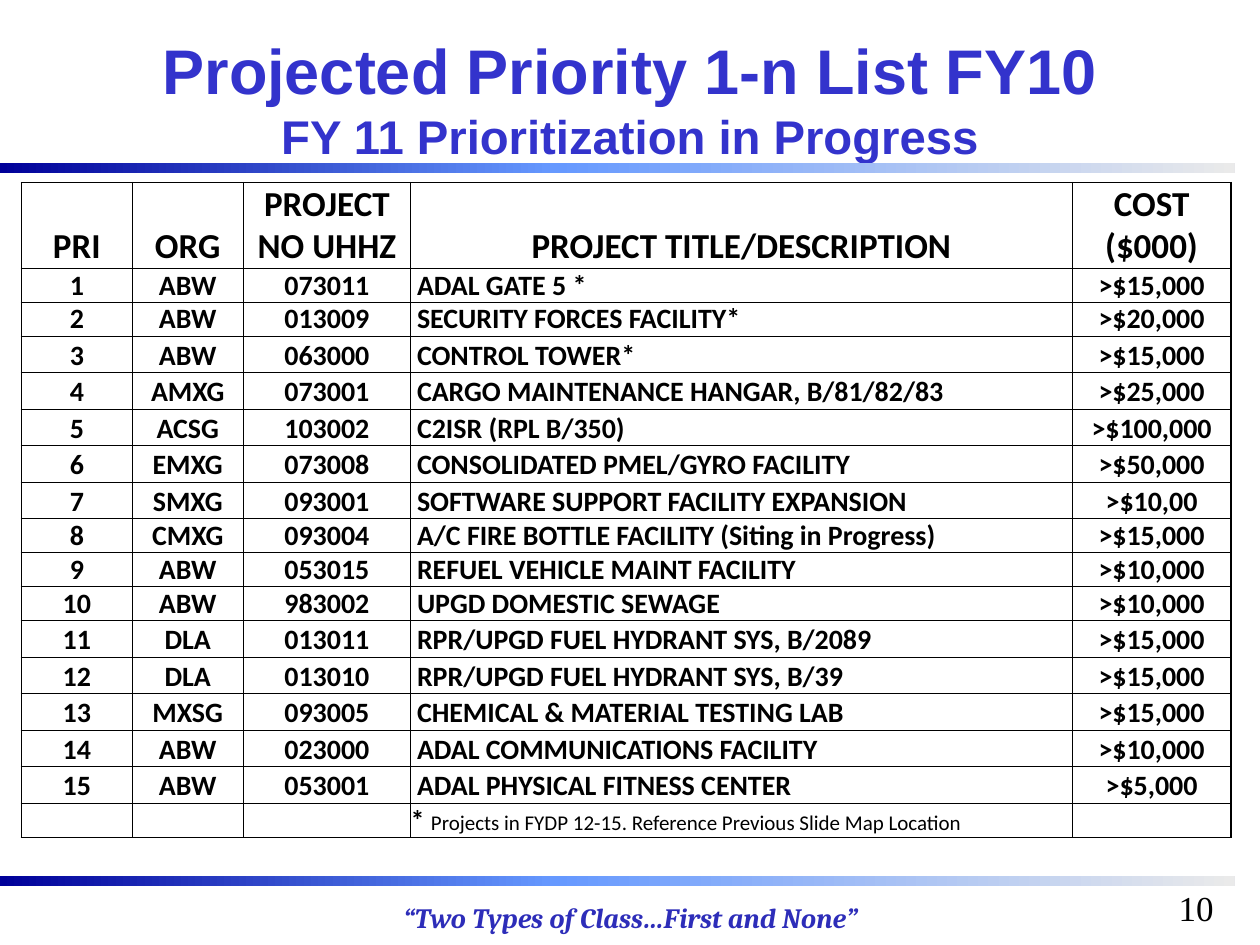
from lxml.etree import SubElement
from pptx import Presentation
from pptx.dml.color import RGBColor
from pptx.enum.shapes import MSO_SHAPE
from pptx.enum.text import MSO_ANCHOR, MSO_AUTO_SIZE, PP_ALIGN
from pptx.oxml.ns import qn
from pptx.util import Inches, Pt

HEADERS = ["PRI", "ORG", "PROJECT NO UHHZ", "PROJECT TITLE/DESCRIPTION", "COST\n($000)"]
PROJECTS = [
    ("ABW", "073011", "ADAL GATE 5 *", ">$15,000"),
    ("ABW", "013009", "SECURITY FORCES FACILITY*", ">$20,000"),
    ("ABW", "063000", "CONTROL TOWER*", ">$15,000"),
    ("AMXG", "073001", "CARGO MAINTENANCE HANGAR, B/81/82/83", ">$25,000"),
    ("ACSG", "103002", "C2ISR (RPL B/350)", ">$100,000"),
    ("EMXG", "073008", "CONSOLIDATED PMEL/GYRO FACILITY", ">$50,000"),
    ("SMXG", "093001", "SOFTWARE SUPPORT FACILITY EXPANSION", ">$10,00"),
    ("CMXG", "093004", "A/C FIRE BOTTLE FACILITY (Siting in Progress)", ">$15,000"),
    ("ABW", "053015", "REFUEL VEHICLE MAINT FACILITY", ">$10,000"),
    ("ABW", "983002", "UPGD DOMESTIC SEWAGE", ">$10,000"),
    ("DLA", "013011", "RPR/UPGD FUEL HYDRANT SYS, B/2089", ">$15,000"),
    ("DLA", "013010", "RPR/UPGD FUEL HYDRANT SYS, B/39", ">$15,000"),
    ("MXSG", "093005", "CHEMICAL & MATERIAL TESTING LAB", ">$15,000"),
    ("ABW", "023000", "ADAL COMMUNICATIONS FACILITY", ">$10,000"),
    ("ABW", "053001", "ADAL PHYSICAL FITNESS CENTER", ">$5,000"),
]
FOOTNOTE = "Projects in FYDP 12-15. Reference Previous Slide Map Location"
COLUMN_WIDTHS = [8.8, 8.8, 13.3, 52.5, 12.6]
SHORT_ROWS = {1, 2, 8, 9, 10, 16}
DESCRIPTION = 3


def color(hex_string):
    return RGBColor.from_string(hex_string)


def apply(target, values):
    for name, value in values.items():
        setattr(target, name, value)


class SlideBuilder:
    """Holds the style and the slide; lengths are units of a 100 x 75 grid."""

    TITLE = {"name": "Arial", "bold": True, "size": Pt(36), "color": "3333CC"}
    MOTTO = {"name": "Cambria", "bold": True, "italic": True, "size": Pt(16), "color": "2D2DB9"}
    NUMBER = {"name": "Times New Roman", "size": Pt(20), "color": "000000"}
    CELL = {"name": "Calibri", "bold": True, "size": Pt(16), "color": "000000"}
    HEADER = CELL | {"size": Pt(20)}
    NOTE = CELL | {"bold": False, "size": Pt(12)}

    def __init__(self, presentation):
        self.unit = presentation.slide_width / 100
        self.slide = presentation.slides.add_slide(presentation.slide_layouts[5])

    def grid(self, *lengths):
        return [round(length * self.unit) for length in lengths]

    def font(self, font, style):
        apply(font, {key: value for key, value in style.items() if key != "color"})
        font.color.rgb = color(style["color"])

    def run(self, paragraph, text, style):
        run = paragraph.add_run()
        run.text = text
        self.font(run.font, style)

    def title(self, box, heading, subheading):
        shape = self.slide.shapes.title
        apply(shape, dict(zip(("left", "top", "width", "height"), self.grid(*box))))
        apply(shape.text_frame, {"auto_size": MSO_AUTO_SIZE.NONE, "word_wrap": True,
                                 "vertical_anchor": MSO_ANCHOR.MIDDLE})
        paragraph = shape.text_frame.paragraphs[0]
        paragraph.alignment = PP_ALIGN.CENTER
        self.run(paragraph, heading, self.TITLE)
        paragraph.add_line_break()
        self.run(paragraph, subheading, self.TITLE | {"size": Pt(27)})

    def text(self, box, text, style, alignment):
        frame = self.slide.shapes.add_textbox(*self.grid(*box)).text_frame
        frame.word_wrap = True
        frame.paragraphs[0].alignment = alignment
        self.run(frame.paragraphs[0], text, style)

    def gradient_bar(self, box, start, end):
        bar = self.slide.shapes.add_shape(MSO_SHAPE.RECTANGLE, *self.grid(*box))
        bar.shadow.inherit = False
        bar.line.fill.background()
        bar.fill.gradient()
        bar.fill.gradient_angle = 0
        for stop, position, shade in zip(bar.fill.gradient_stops, (0, 1), (start, end)):
            stop.position = position
            stop.color.rgb = color(shade)

    def divider(self, top):
        self.gradient_bar((0, top, 44.2, 0.8), "000099", "6699FF")
        self.gradient_bar((44.2, top, 53.8, 0.8), "6699FF", "EAEAEA")

    def borders(self, cell, widths):
        properties = cell._tc.get_or_add_tcPr()
        for side in "LRTB":
            line = SubElement(properties, qn(f"a:ln{side}"), w=str(Pt(widths.get(side, 0.5))))
            fill = SubElement(line, qn("a:solidFill"))
            SubElement(fill, qn("a:srgbClr"), val="000000")

    def cell(self, cell, text, style, alignment, indent=0):
        apply(cell, {"margin_left": self.grid(indent)[0], "margin_right": 0, "margin_top": 0,
                     "margin_bottom": 0, "vertical_anchor": MSO_ANCHOR.BOTTOM})
        cell.fill.background()
        cell.text = text
        for paragraph in cell.text_frame.paragraphs:
            paragraph.alignment = alignment
            self.font(paragraph.font, style)
            for run in paragraph.runs:
                self.font(run.font, style)

    def table(self, left, top, widths, heights, rows):
        frame = self.slide.shapes.add_table(
            len(rows), len(widths), *self.grid(left, top, sum(widths), sum(heights)))
        table = frame.table
        apply(table, {"first_row": False, "horz_banding": False})
        for column, width in zip(table.columns, self.grid(*widths)):
            column.width = width
        for row, height in zip(table.rows, self.grid(*heights)):
            row.height = height
        last_column = len(widths) - 1
        for row_index, row in enumerate(rows):
            for column_index, text in enumerate(row):
                cell = table.cell(row_index, column_index)
                # Outer edges are heavier on the left, top and right
                edges = {"L": column_index == 0, "T": row_index == 0,
                         "R": column_index == last_column}
                self.borders(cell, {side: 1 for side, outer in edges.items() if outer})
                is_description = row_index > 0 and column_index == DESCRIPTION
                is_project = 0 < row_index < len(rows) - 1
                self.cell(cell, text, self.CELL if row_index else self.HEADER,
                          PP_ALIGN.LEFT if is_description else PP_ALIGN.CENTER,
                          0.5 if is_description and is_project else 0)
        return table


def main():
    presentation = Presentation()
    apply(presentation, {"slide_width": Inches(10), "slide_height": Inches(7.5)})
    builder = SlideBuilder(presentation)

    # Footer motto and dividers
    builder.text((14.2, 71, 71.7, 3.7), "“Two Types of Class…First and None”",
                 builder.MOTTO, PP_ALIGN.CENTER)
    for top in (12.9, 69.5):
        builder.divider(top)

    # Title and page number
    builder.title((5, 3, 90, 9.5), "Projected Priority 1-n List FY10",
                  "FY 11 Prioritization in Progress")
    builder.text((76.5, 69.9, 20.8, 3.7), "10", builder.NUMBER, PP_ALIGN.RIGHT)

    # Priority table, closed by a footnote row
    rows = [HEADERS]
    rows += [(str(priority), *project) for priority, project in enumerate(PROJECTS, 1)]
    rows.append(("", "", "", "* ", ""))
    heights = [6.8] + [2.7 if row in SHORT_ROWS else 2.9 for row in range(1, len(rows))]
    table = builder.table(1.7, 14.5, COLUMN_WIDTHS, heights, rows)
    footnote = table.cell(len(rows) - 1, DESCRIPTION).text_frame.paragraphs[0]
    builder.run(footnote, FOOTNOTE, builder.NOTE)

    presentation.save("out.pptx")


if __name__ == "__main__":
    main()
